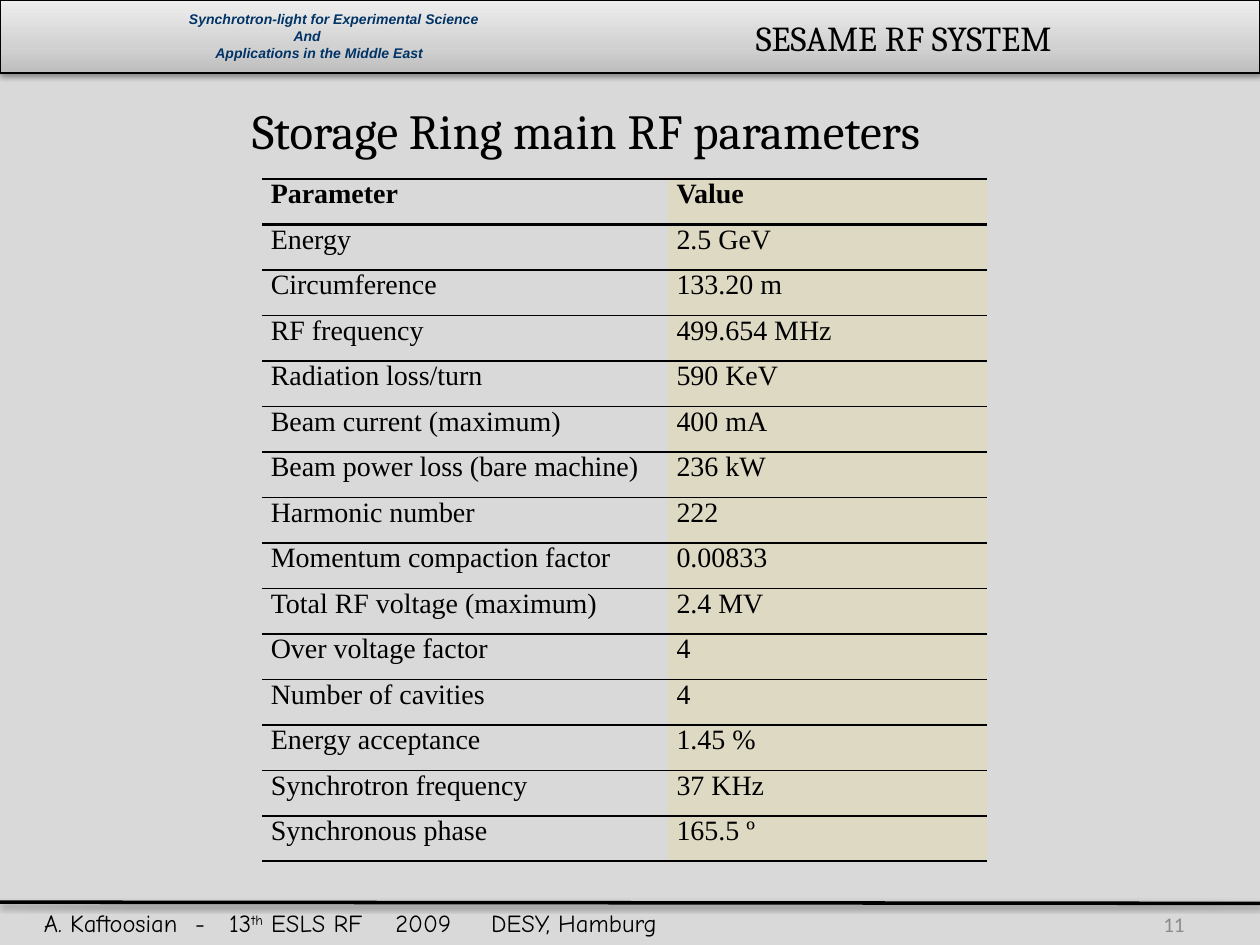
import collections
import dataclasses

import lxml.etree
import pptx
import pptx.dml.color
import pptx.enum.shapes
import pptx.enum.text
import pptx.oxml
import pptx.oxml.ns
import pptx.util

Inches = pptx.util.Inches
Pt = pptx.util.Pt
Anchor = pptx.enum.text.MSO_ANCHOR
Align = pptx.enum.text.PP_ALIGN
qn = pptx.oxml.ns.qn
NAMESPACE = pptx.oxml.ns.nsdecls("a")

Theme = collections.namedtuple(
    "Theme",
    "background ink navy grey value_fill gradient title heading footer body number motto",
)
THEME = Theme(
    background="D9D9D9", ink="000000", navy="003366", grey="8C8C8C",
    value_fill="DDD9C3",
    gradient=((0, "BDBDBD"), (35, "D1D1D1"), (100, "EEEEEE")),
    title=28, heading=20, footer=14, body=16, number=12, motto=8,
)

PARAMETERS = (
    ("Parameter", "Value"),
    ("Energy", "2.5 GeV"),
    ("Circumference", "133.20 m"),
    ("RF frequency", "499.654 MHz"),
    ("Radiation loss/turn", "590 KeV"),
    ("Beam current (maximum)", "400 mA"),
    ("Beam power loss (bare machine)", "236 kW"),
    ("Harmonic number", "222"),
    ("Momentum compaction factor", "0.00833"),
    ("Total RF voltage (maximum)", "2.4 MV"),
    ("Over voltage factor", "4"),
    ("Number of cavities", "4"),
    ("Energy acceptance", "1.45 %"),
    ("Synchrotron frequency", "37 KHz"),
    ("Synchronous phase", "165.5 º"),
)


@dataclasses.dataclass
class Box:
    left: float
    top: float
    width: float
    height: float

    def share(self, left, top, width, height):
        return Box(self.left + left * self.width, self.top + top * self.height,
                   width * self.width, height * self.height)

    def emu(self):
        return [Inches(side) for side in (self.left, self.top, self.width, self.height)]


def color(value):
    return pptx.dml.color.RGBColor.from_string(value)


def add_run(paragraph, text, size, font, ink=THEME.ink, bold=False, italic=False, raised=False):
    run = paragraph.add_run()
    run.text = text
    run.font.size, run.font.name = Pt(size), font
    run.font.bold, run.font.italic = bold, italic
    run.font.color.rgb = color(ink)
    if raised:
        run.font._element.set("baseline", "30000")


def add_text(slide, box, text="", anchor=Anchor.TOP, align=Align.LEFT, inset=None,
             wrap=True, indents=(), **style):
    frame = slide.shapes.add_textbox(*box.emu()).text_frame
    frame.word_wrap, frame.vertical_anchor = wrap, anchor
    if inset is not None:
        frame.margin_left = frame.margin_right = Inches(inset)
        frame.margin_top = frame.margin_bottom = Inches(inset)
    for index, line in enumerate(text.split("\n")):
        paragraph = frame.add_paragraph() if index else frame.paragraphs[0]
        paragraph.alignment = align
        if indents:
            properties = paragraph._p.get_or_add_pPr()
            properties.set("marL", str(Inches(indents[index])))
            properties.set("indent", "0")
        if line:
            add_run(paragraph, line, **style)
    return frame


def add_shadow(shape):
    properties = shape._element.spPr
    effects = properties.find(qn("a:effectLst"))
    if effects is None:
        effects = lxml.etree.SubElement(properties, qn("a:effectLst"))
    effects.append(pptx.oxml.parse_xml(
        f'<a:outerShdw {NAMESPACE} blurRad="40000" dist="20000" dir="5400000" rotWithShape="0">'
        '<a:srgbClr val="000000"><a:alpha val="38000"/></a:srgbClr></a:outerShdw>'))


def fill_gradient(shape, stops):
    marks = "".join(f'<a:gs pos="{share * 1000}"><a:srgbClr val="{value}"/></a:gs>'
                    for share, value in stops)
    shape.fill.background()
    old = shape._element.spPr.find(qn("a:noFill"))
    old.getparent().replace(old, pptx.oxml.parse_xml(
        f'<a:gradFill {NAMESPACE} rotWithShape="1"><a:gsLst>{marks}</a:gsLst>'
        '<a:lin ang="16200000" scaled="0"/></a:gradFill>'))


def add_header(slide, box):
    banner = slide.shapes.add_shape(pptx.enum.shapes.MSO_SHAPE.RECTANGLE, *box.emu())
    banner.shadow.inherit = False
    banner.line.color.rgb, banner.line.width = color(THEME.ink), Pt(0.75)
    fill_gradient(banner, THEME.gradient)
    add_shadow(banner)
    motto = ("Synchrotron-light for Experimental Science\nAnd\n"
             "Applications in the Middle East")
    add_text(slide, box.share(0.15, 0.14, 0.24, 0.7), motto, anchor=Anchor.MIDDLE,
             inset=0, wrap=False, indents=(0, 0.83, 0.21), size=THEME.motto,
             font="Arial", ink=THEME.navy, bold=True, italic=True)
    add_text(slide, box.share(0.59, 0.14, 0.3, 0.75), "SESAME RF SYSTEM",
             size=THEME.heading, font="Cambria")


def add_footer(slide, box):
    rule = slide.shapes.add_connector(
        pptx.enum.shapes.MSO_CONNECTOR.STRAIGHT, Inches(box.left), Inches(box.top),
        Inches(box.left + box.width), Inches(box.top + 0.01))
    rule.line.color.rgb, rule.line.width = color(THEME.ink), Pt(2)
    add_shadow(rule)
    paragraph = add_text(slide, box.share(0.025, 0, 0.67, 1)).paragraphs[0]
    tabs = lxml.etree.SubElement(paragraph._p.get_or_add_pPr(), qn("a:tabLst"))
    for position in (1.2, 1.47, 2.79, 3.55):
        lxml.etree.SubElement(tabs, qn("a:tab"), pos=str(Inches(position)), algn="l")
    for text, raised in (("A. Kaftoosian\t-\t13", False), ("th", True),
                         (" ESLS RF\t2009\tDESY, Hamburg", False)):
        add_run(paragraph, text, THEME.footer, "Comic Neue", raised=raised)
    add_text(slide, box.share(0.875, 0.02, 0.075, 0.98), "11", anchor=Anchor.MIDDLE,
             align=Align.RIGHT, size=THEME.number, font="Calibri", ink=THEME.grey)


def add_title(slide, box, text):
    title = slide.shapes.title
    title.left, title.top, title.width, title.height = box.emu()
    frame = title.text_frame
    frame.auto_size = pptx.enum.text.MSO_AUTO_SIZE.NONE
    frame.word_wrap, frame.vertical_anchor = True, Anchor.TOP
    frame.paragraphs[0].alignment = Align.LEFT
    add_run(frame.paragraphs[0], text, THEME.title, "Cambria")


def set_borders(cell, top, bottom):
    properties = cell._tc.get_or_add_tcPr()
    for index, (side, width) in enumerate((("L", 0), ("R", 0), ("T", top), ("B", bottom))):
        paint = (f'<a:solidFill><a:srgbClr val="{THEME.ink}"/></a:solidFill>'
                 if width else "<a:noFill/>")
        properties.insert(index, pptx.oxml.parse_xml(
            f'<a:ln{side} {NAMESPACE} w="{int(Pt(width))}">{paint}</a:ln{side}>'))


def add_parameter_table(slide, box, rows):
    table = slide.shapes.add_table(len(rows), 2, *box.emu()).table
    table.first_row = table.horz_banding = False
    for column, share in zip(table.columns, (0.56, 0.44)):
        column.width = Inches(box.width * share)
    widths = [1.5, 1.5] + [1] * (len(rows) - 2) + [1.5]
    for row, texts in enumerate(rows):
        table.rows[row].height = Inches(box.height / len(rows))
        for column, text in enumerate(texts):
            cell = table.cell(row, column)
            cell.margin_left = cell.margin_right = Inches(0.07)
            cell.margin_top = cell.margin_bottom = 0
            cell.fill.solid()
            cell.fill.fore_color.rgb = color((THEME.background, THEME.value_fill)[column])
            set_borders(cell, widths[row], widths[row + 1])
            add_run(cell.text_frame.paragraphs[0], text, THEME.body,
                    "Times New Roman", bold=row == 0)


def main():
    presentation = pptx.Presentation()
    page = Box(0, 0, 10, 7.5)
    presentation.slide_width, presentation.slide_height = page.emu()[2:]
    slide = presentation.slides.add_slide(presentation.slide_layouts[5])
    slide.background.fill.solid()
    slide.background.fill.fore_color.rgb = color(THEME.background)
    add_header(slide, Box(0, 0, page.width, 0.58))
    add_title(slide, page.share(0.19, 0.1, 0.61, 0.08), "Storage Ring main RF parameters")
    add_parameter_table(slide, Box(2.08, 1.42, 5.75, 5.42), PARAMETERS)
    add_footer(slide, Box(0, 7.16, page.width, 0.34))
    presentation.save("out.pptx")


if __name__ == "__main__":
    main()
